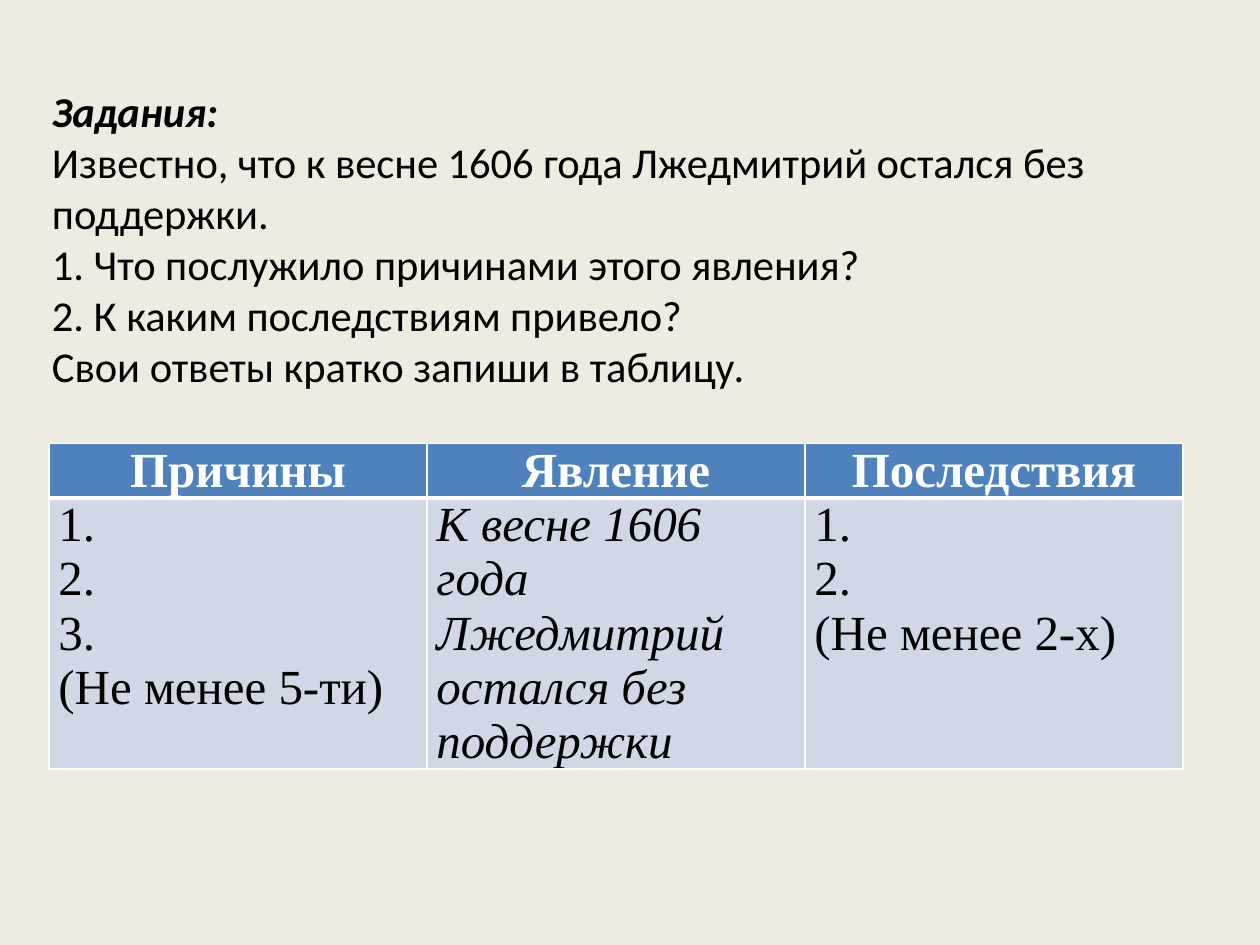
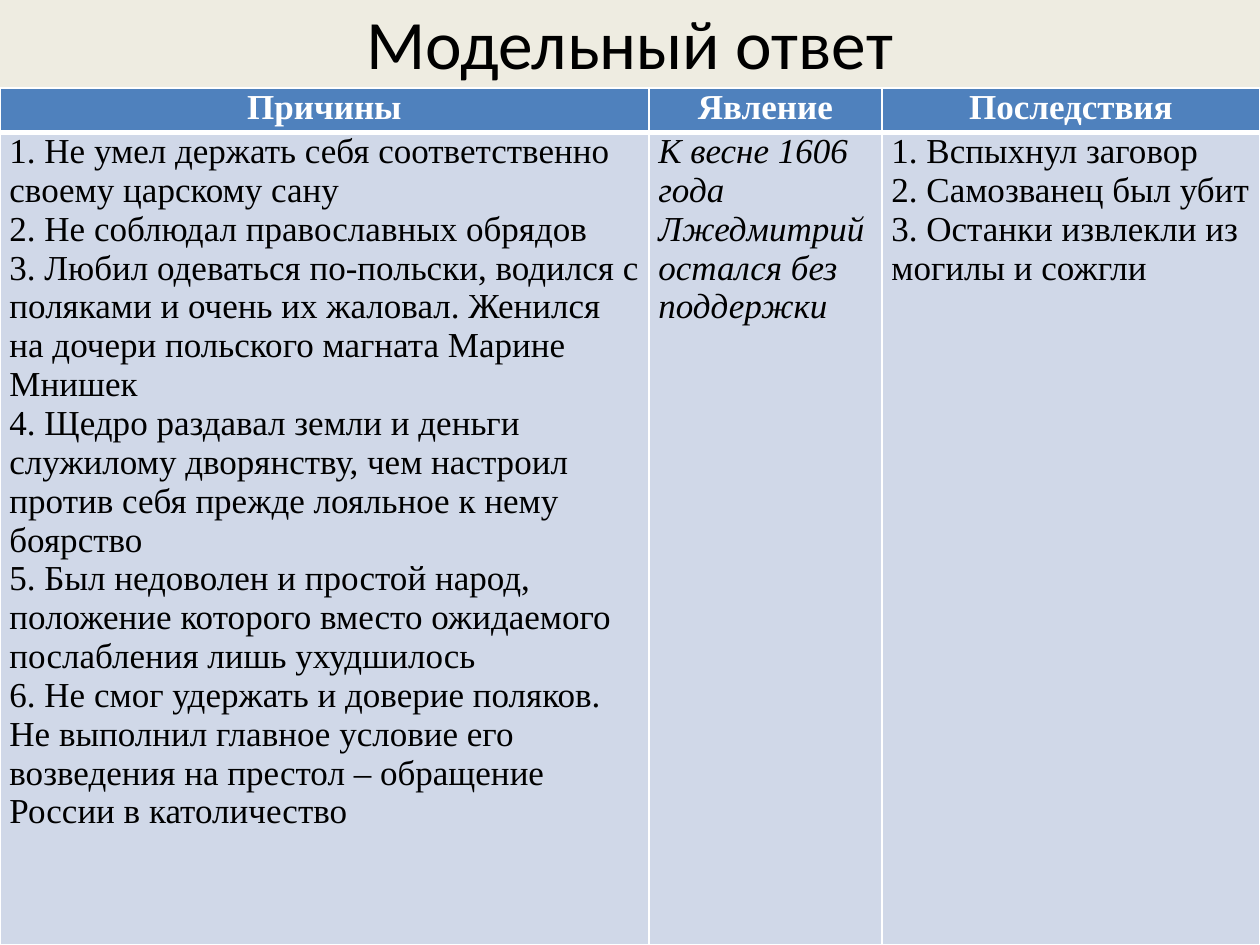
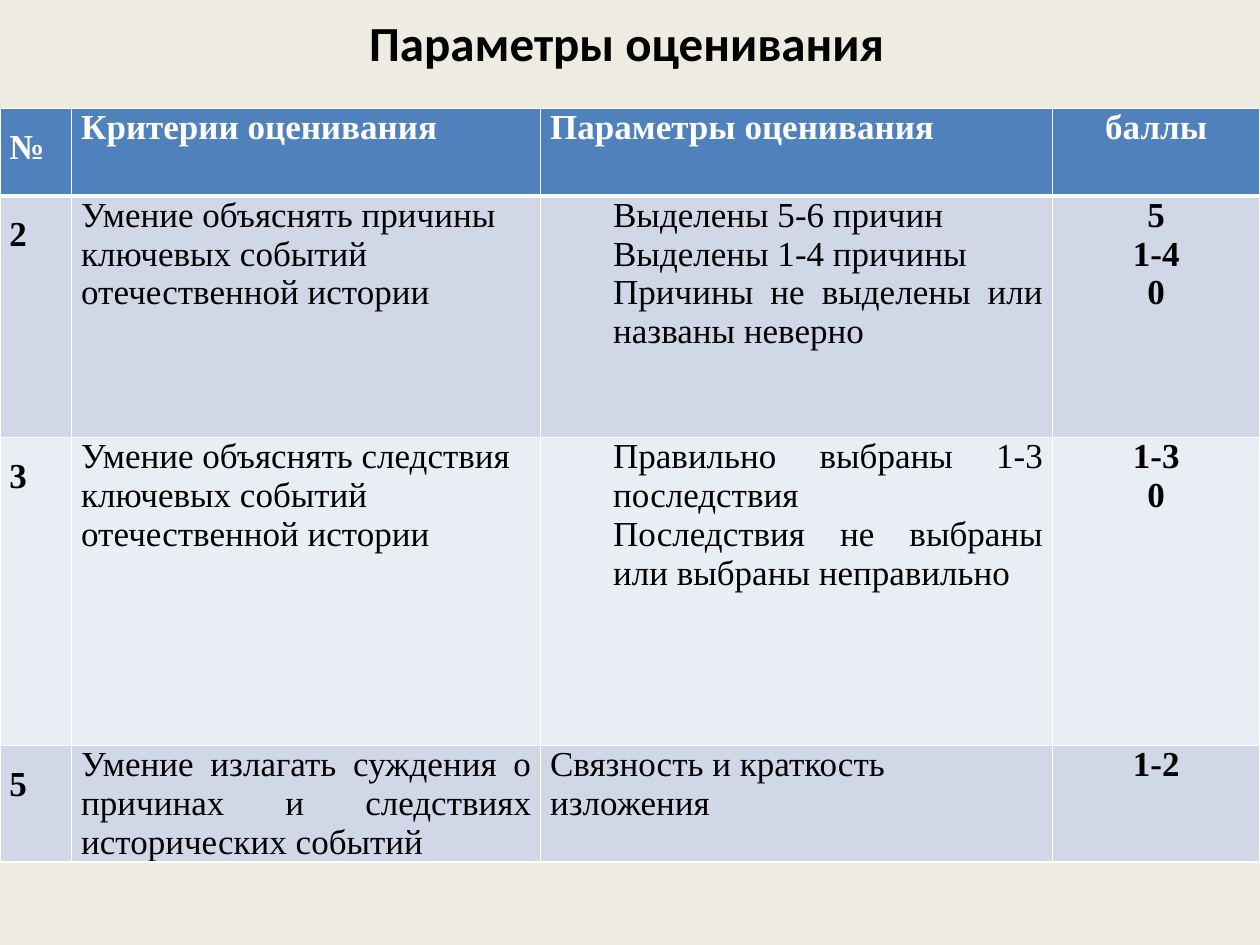
from dataclasses import dataclass

import pptx
import pptx.dml.color
import pptx.enum.text
import pptx.oxml
import pptx.oxml.ns
import pptx.util

Pt = pptx.util.Pt
ALIGN = pptx.enum.text.PP_ALIGN

COLORS = {
    "background": "EEECE1",
    "text": "000000",
    "header": "4F81BD",
    "header_text": "FFFFFF",
    "odd_row": "D0D8E8",
    "even_row": "E9EDF4",
    "border": "FFFFFF",
}
TITLE_FONT = "Calibri"
TABLE_FONT = "Times New Roman"
CELL_MARGIN = 5.4
THIN, THICK = 1, 3
PHENOMENON = "К весне 1606 года Лжедмитрий остался без поддержки"


@dataclass(frozen=True)
class Box:
    left: float
    top: float
    width: float
    height: float


@dataclass(frozen=True)
class TitleLine:
    text: str
    bold: bool = False
    italic: bool = False


@dataclass(frozen=True)
class Cell:
    lines: tuple[str, ...]
    bold: bool = False
    italic: bool = False
    align: ALIGN = ALIGN.LEFT
    indent: float = 0
    spacing: float = 1.0


@dataclass(frozen=True)
class Grid:
    left: float
    top: float
    columns: tuple[float, ...]
    row_heights: tuple[float, ...]
    font_size: float
    rows: tuple[tuple[Cell, ...], ...]


def rgb(name: str) -> pptx.dml.color.RGBColor:
    return pptx.dml.color.RGBColor.from_string(COLORS[name])


def add_run(paragraph, text: str, font_name: str, size: float, color: str,
            bold: bool, italic: bool) -> None:
    run = paragraph.add_run()
    run.text = text
    font = run.font
    font.name, font.size = font_name, Pt(size)
    font.bold, font.italic = bold, italic
    font.color.rgb = rgb(color)


def add_titled_slide(deck, box: Box, lines: tuple[TitleLine, ...], size: float,
                     align: ALIGN = ALIGN.CENTER):
    slide = deck.slides.add_slide(deck.slide_layouts[5])
    title = slide.shapes.title
    title.left, title.top = Pt(box.left), Pt(box.top)
    title.width, title.height = Pt(box.width), Pt(box.height)
    frame = title.text_frame
    frame.word_wrap = True
    frame.auto_size = pptx.enum.text.MSO_AUTO_SIZE.NONE
    frame.vertical_anchor = pptx.enum.text.MSO_ANCHOR.MIDDLE
    frame.margin_top = frame.margin_bottom = 0
    paragraph = frame.paragraphs[0]
    paragraph.alignment = align
    for index, line in enumerate(lines):
        if index:
            paragraph.add_line_break()
        add_run(paragraph, line.text, TITLE_FONT, size, "text", line.bold, line.italic)
    return slide


def set_borders(table_cell, top: float, bottom: float) -> None:
    properties = table_cell._tc.get_or_add_tcPr()
    widths = {"lnL": THIN, "lnR": THIN, "lnT": top, "lnB": bottom}
    for position, (side, width) in enumerate(widths.items()):
        properties.insert(position, pptx.oxml.parse_xml(
            f'<a:{side} {pptx.oxml.ns.nsdecls("a")} w="{Pt(width)}"><a:solidFill>'
            f'<a:srgbClr val="{COLORS["border"]}"/></a:solidFill></a:{side}>'))


def fill_cell(table_cell, content: Cell, row: int, size: float) -> None:
    if row == 0:
        background, color = "header", "header_text"
    else:
        background, color = ("odd_row" if row % 2 else "even_row"), "text"
    table_cell.fill.solid()
    table_cell.fill.fore_color.rgb = rgb(background)
    set_borders(table_cell, THICK if row == 1 else THIN, THICK if row == 0 else THIN)
    table_cell.margin_left = Pt(CELL_MARGIN + content.indent)
    table_cell.margin_right = Pt(CELL_MARGIN)
    table_cell.margin_top = table_cell.margin_bottom = 0
    frame = table_cell.text_frame
    for index, line in enumerate(content.lines):
        paragraph = frame.add_paragraph() if index else frame.paragraphs[0]
        paragraph.alignment = content.align
        paragraph.line_spacing = content.spacing
        add_run(paragraph, line, TABLE_FONT, size, color, content.bold, content.italic)


def add_grid(slide, grid: Grid) -> None:
    table = slide.shapes.add_table(
        len(grid.rows), len(grid.columns), Pt(grid.left), Pt(grid.top),
        Pt(sum(grid.columns)), Pt(sum(grid.row_heights))).table
    for column, width in zip(table.columns, grid.columns):
        column.width = Pt(width)
    for row, height in zip(table.rows, grid.row_heights):
        row.height = Pt(height)
    for row_index, contents in enumerate(grid.rows):
        for column_index, content in enumerate(contents):
            fill_cell(table.cell(row_index, column_index), content, row_index,
                      grid.font_size)


def centered(*lines: str) -> Cell:
    return Cell(lines, bold=True, align=ALIGN.CENTER)


def number(text: str) -> Cell:
    return Cell((text,), bold=True, align=ALIGN.JUSTIFY, spacing=1.5)


def criterion_header(text: str) -> Cell:
    return Cell((text,), bold=True, align=ALIGN.JUSTIFY)


def levels(*lines: str) -> Cell:
    """Indented list of the answers that earn each score."""
    return Cell(lines, align=ALIGN.JUSTIFY, indent=36)


def cause_effect_rows(causes: tuple[str, ...], effects: tuple[str, ...]):
    return (
        (centered("Причины"), centered("Явление"), centered("Последствия")),
        (Cell(causes), Cell((PHENOMENON,), italic=True), Cell(effects)),
    )


def add_task_slide(deck) -> None:
    task = (
        TitleLine("Задания:", bold=True, italic=True),
        TitleLine("Известно, что к весне 1606 года Лжедмитрий остался без поддержки."),
        TitleLine("1. Что послужило причинами этого явления?"),
        TitleLine("2. К каким последствиям привело?"),
        TitleLine("Свои ответы кратко запиши в таблицу."),
    )
    slide = add_titled_slide(deck, Box(22.5, 46, 648, 180), task, 24.3, ALIGN.LEFT)
    add_grid(slide, Grid(28, 253.5, (216,) * 3, (30, 155), 28, cause_effect_rows(
        ("1.", "2.", "3.", "(Не менее 5-ти)"),
        ("1.", "2.", "(Не менее 2-х)"))))


def add_answer_slide(deck) -> None:
    slide = add_titled_slide(deck, Box(36, 0, 648, 48),
                             (TitleLine("Модельный ответ"),), 39.6)
    causes = (
        "1. Не умел держать себя соответственно своему царскому сану",
        "2. Не соблюдал православных обрядов",
        "3. Любил одеваться по-польски, водился с поляками и очень их жаловал. "
        "Женился на дочери польского магната Марине Мнишек",
        "4. Щедро раздавал земли и деньги служилому дворянству, чем настроил "
        "против себя прежде лояльное к нему боярство",
        "5. Был недоволен и простой народ, положение которого вместо ожидаемого "
        "послабления лишь ухудшилось",
        "6. Не смог удержать и доверие поляков. Не выполнил главное условие его "
        "возведения на престол – обращение России в католичество",
    )
    effects = (
        "1. Вспыхнул заговор",
        "2. Самозванец был убит",
        "3. Останки извлекли из могилы и сожгли",
    )
    add_grid(slide, Grid(0, 50.4, (370.8, 133.2, 216), (25.2, 464), 20,
                         cause_effect_rows(causes, effects)))


def add_criteria_slide(deck) -> None:
    slide = add_titled_slide(deck, Box(34, 0, 648, 48),
                             (TitleLine("Параметры оценивания", bold=True),), 28)
    rows = (
        (number("№"), criterion_header("Критерии оценивания"),
         criterion_header("Параметры оценивания"), centered("баллы")),
        (number("2"),
         Cell(("Умение объяснять причины ключевых событий отечественной истории",)),
         levels("Выделены 5-6 причин", "Выделены 1-4 причины",
                "Причины не выделены или названы неверно"),
         centered("5", "1-4", "0")),
        (number("3"),
         Cell(("Умение объяснять следствия ключевых событий отечественной истории",)),
         levels("Правильно выбраны 1-3 последствия",
                "Последствия не выбраны или выбраны неправильно"),
         centered("1-3", "0")),
        (number("5"),
         Cell(("Умение излагать суждения о причинах и следствиях исторических событий",),
              align=ALIGN.JUSTIFY),
         Cell(("Связность и краткость изложения",)),
         centered("1-2")),
    )
    add_grid(slide, Grid(0, 62, (41, 268, 292.5, 118.5), (50, 138, 176, 66), 20, rows))


def main() -> None:
    deck = pptx.Presentation()
    deck.slide_width, deck.slide_height = Pt(720), Pt(540)
    background = deck.slide_master.background.fill
    background.solid()
    background.fore_color.rgb = rgb("background")
    add_task_slide(deck)
    add_answer_slide(deck)
    add_criteria_slide(deck)
    deck.save("out.pptx")


if __name__ == "__main__":
    main()
